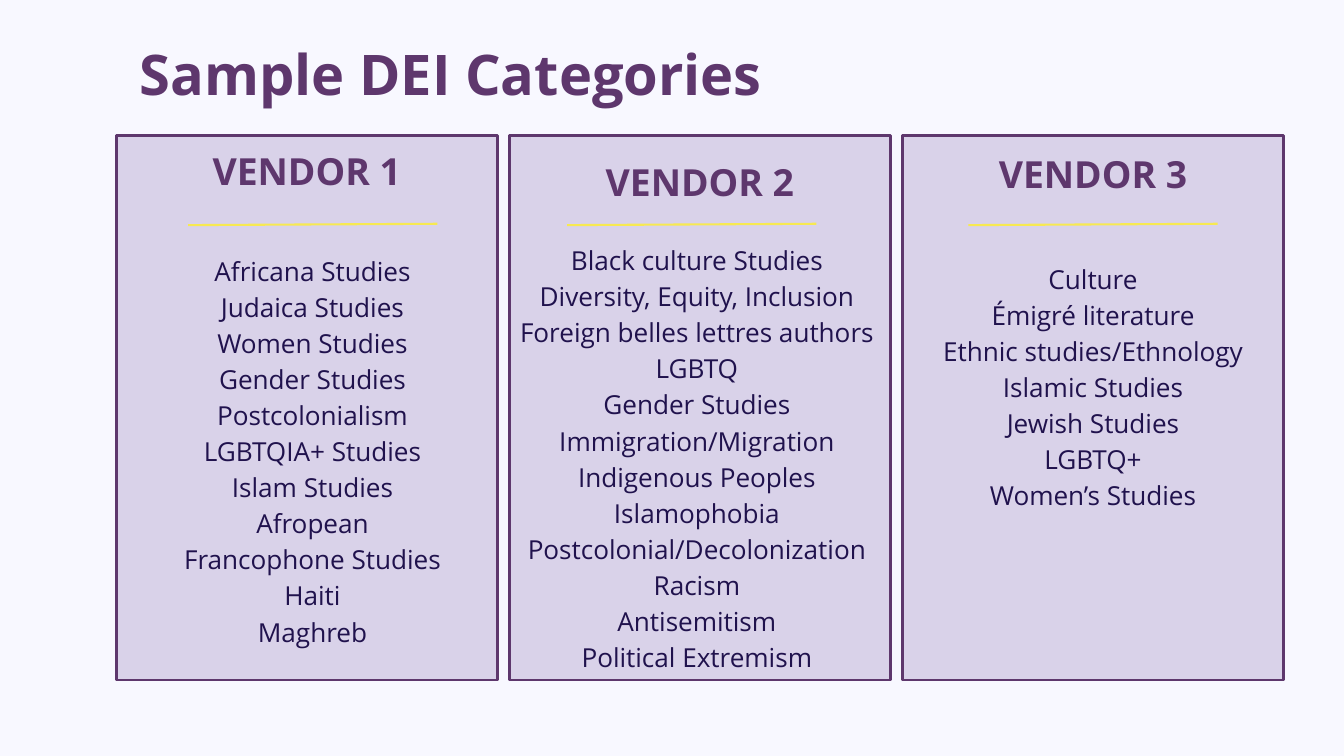
from pptx import Presentation
from pptx.dml.color import RGBColor
from pptx.enum.shapes import MSO_CONNECTOR, MSO_SHAPE
from pptx.enum.text import MSO_ANCHOR, PP_ALIGN
from pptx.oxml.ns import qn
from pptx.util import Inches, Pt
from lxml import etree

PURPLE = RGBColor(0x5E, 0x37, 0x6D)
LAVENDER = RGBColor(0xD9, 0xD2, 0xE9)
NAVY = RGBColor(0x20, 0x12, 0x4D)
YELLOW = RGBColor(0xF7, 0xE9, 0x51)
GHOST_WHITE = RGBColor(0xF8, 0xF8, 0xFF)


def write_text(sp, text, size, color=PURPLE, bold=False,
               align=PP_ALIGN.CENTER, spacing=1.15, inset=0):
    tf = sp.text_frame
    tf.word_wrap = True
    tf.vertical_anchor = MSO_ANCHOR.TOP
    tf.margin_left = tf.margin_right = Inches(inset)
    tf.margin_top = tf.margin_bottom = Inches(inset)
    tf.text = text
    for p in tf.paragraphs:
        p.alignment = align
        p.line_spacing = spacing
        for r in p.runs:
            r.font.name = "Open Sans"
            r.font.size = Pt(size)
            r.font.bold = bold
            r.font.color.rgb = color


prs = Presentation()
prs.slide_width = Inches(20)
prs.slide_height = Inches(11.25)
s = prs.slides.add_slide(prs.slide_layouts[5])
s.background.fill.solid()
s.background.fill.fore_color.rgb = GHOST_WHITE

title = s.shapes.title
title.left, title.top = Inches(2.08), Inches(0.76)
title.width, title.height = Inches(16.67), Inches(0.83)
write_text(title, "Sample DEI Categories", 60, bold=True,
           align=PP_ALIGN.LEFT, spacing=0.82)

CARD_LEFT, CARD_TOP, CARD_W, CARD_H, CARD_STEP = 1.73, 2.02, 5.67, 8.1, 5.85
vendors = [
    {"heading": (2.33, 0.55, 0.82), "rule": 2.8, "list": (1.91, 3.63, 5.48, 6.64),
     "categories": ["Africana Studies", "Judaica Studies", "Women Studies",
                    "Gender Studies", "Postcolonialism", "LGBTQIA+ Studies",
                    "Islam Studies", "Afropean", "Francophone Studies",
                    "Haiti", "Maghreb"]},
    {"heading": (2.27, 0.67, 1.15), "rule": 8.44, "list": (7.53, 3.47, 5.68, 6.64),
     "categories": ["Black culture Studies", "Diversity, Equity, Inclusion",
                    "Foreign belles lettres authors", "LGBTQ", "Gender Studies",
                    "Immigration/Migration", "Indigenous Peoples", "Islamophobia",
                    "Postcolonial/Decolonization", "Racism", "Antisemitism",
                    "Political Extremism"]},
    {"heading": (2.25, 0.67, 1.0), "rule": 14.41, "list": (13.66, 3.75, 5.21, 3.95),
     "categories": ["Culture", "Émigré literature", "Ethnic studies/Ethnology",
                    "Islamic Studies", "Jewish Studies", "LGBTQ+",
                    "Women’s Studies"]},
]

for i, vendor in enumerate(vendors):
    left = CARD_LEFT + i * CARD_STEP
    card = s.shapes.add_shape(MSO_SHAPE.RECTANGLE, Inches(left), Inches(CARD_TOP),
                              Inches(CARD_W), Inches(CARD_H))
    card.shadow.inherit = False
    card.fill.solid()
    card.fill.fore_color.rgb = LAVENDER
    card.line.color.rgb = PURPLE
    card.line.width = Pt(3)

    top, height, spacing = vendor["heading"]
    heading = s.shapes.add_textbox(Inches(left + 0.18), Inches(top),
                                   Inches(5.31), Inches(height))
    write_text(heading, f"VENDOR {i + 1}", 40, bold=True, spacing=spacing)

    rule = s.shapes.add_connector(MSO_CONNECTOR.STRAIGHT,
                                  Inches(vendor["rule"]), Inches(3.35),
                                  Inches(vendor["rule"] + 3.71), Inches(3.33))
    rule.line.color.rgb = YELLOW
    rule.line.width = Pt(2.25)
    etree.SubElement(rule._element.spPr, qn("a:effectLst"))

    box = s.shapes.add_textbox(*[Inches(v) for v in vendor["list"]])
    write_text(box, "\n".join(vendor["categories"]), 28, color=NAVY, inset=0.1)

prs.save("out.pptx")
